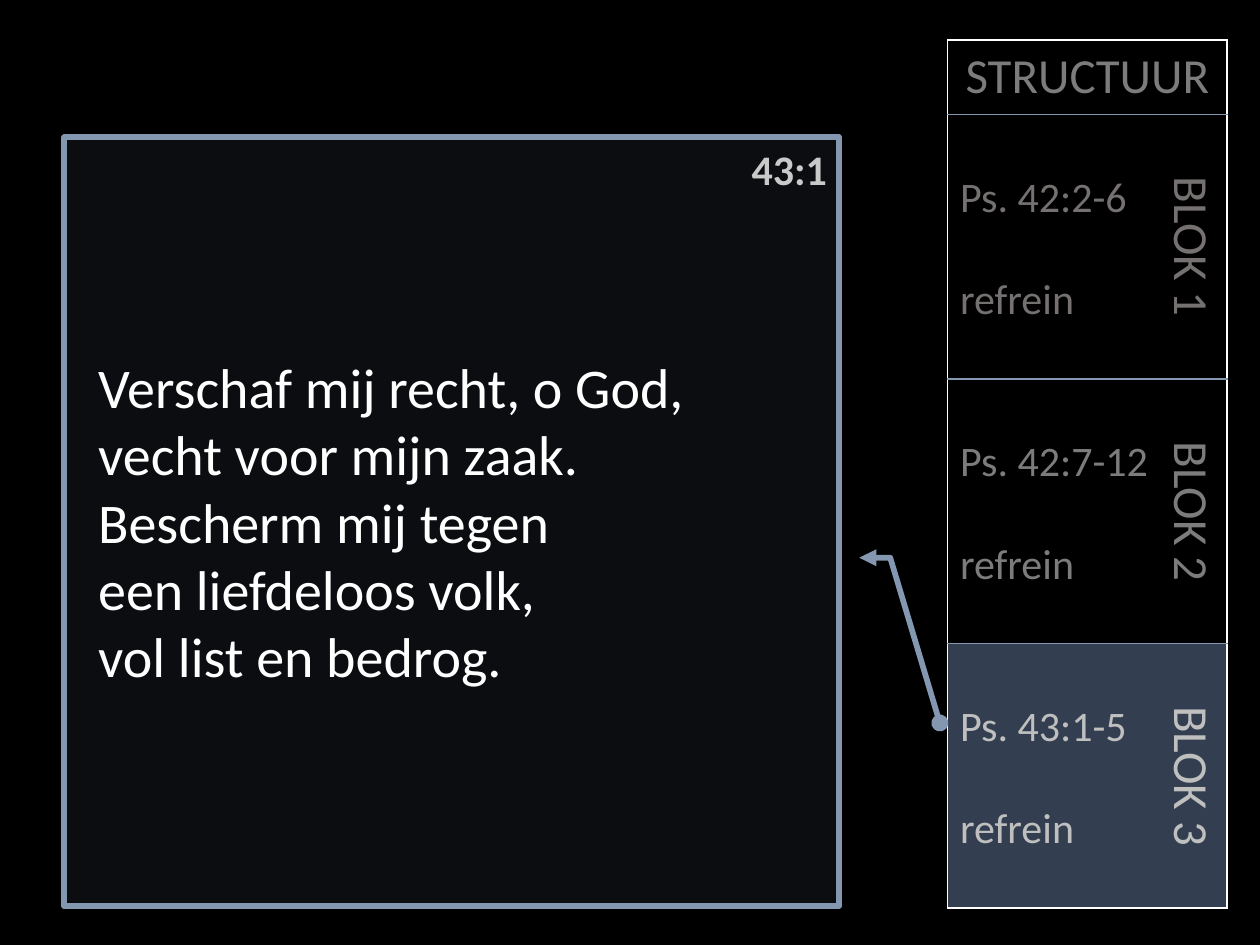
from dataclasses import dataclass

from lxml.etree import SubElement
from pptx import Presentation
from pptx.dml.color import RGBColor as Rgb
from pptx.enum.shapes import MSO_SHAPE as Kind
from pptx.enum.text import MSO_ANCHOR as Anchor, PP_ALIGN as Align
from pptx.oxml import parse_xml
from pptx.oxml.ns import nsdecls, qn
from pptx.util import Pt


@dataclass(frozen=True)
class Theme:
    font: str = "Calibri"
    back: str = "000000"
    white: str = "FFFFFF"
    blue: str = "8497B0"
    panel: str = "222A35"
    active: str = "333F50"
    head: str = "7C7C7C"
    label: str = "C9C9C9"
    small: int = 24
    mid: int = 28
    big: int = 32


THEME = Theme()
LINE = 29.3  # height of one line of small text

# passage, block name, text colour, fill
BLOCKS = [
    ("Ps. 42:2-6", "BLOK 1", "767171", None),
    ("Ps. 42:7-12", "BLOK 2", "7C7C7C", None),
    ("Ps. 43:1-5", "BLOK 3", "BFBFBF", THEME.active),
]
VERSE = [
    "Verschaf mij recht, o God,",
    "vecht voor mijn zaak.",
    "Bescherm mij tegen",
    "een liefdeloos volk,",
    "vol list en bedrog.",
]


def write(frame, lines, size, color, align=Align.LEFT, bold=False, gap=0):
    """Write one paragraph per line, with a gap before all but the first."""
    for i, line in enumerate(lines):
        para = frame.add_paragraph() if i else frame.paragraphs[0]
        para.alignment = align
        if i and gap:
            para.space_before = Pt(gap)
        run = para.add_run()
        run.text = line
        run.font.name = THEME.font
        run.font.size = Pt(size)
        run.font.bold = bold
        run.font.color.rgb = Rgb.from_string(color)


def add_text(slide, box, lines, size, color, **look):
    frame = slide.shapes.add_textbox(*map(Pt, box)).text_frame
    frame.word_wrap = True
    write(frame, lines, size, color, **look)


def style_cell(cell, fill, left, right, top, bottom):
    """Set the fill and the four borders; None means no fill or no line."""
    if fill:
        cell.fill.solid()
        cell.fill.fore_color.rgb = Rgb.from_string(fill)
    else:
        cell.fill.background()
    props = cell._tc.get_or_add_tcPr()
    sides = {"lnL": left, "lnR": right, "lnT": top, "lnB": bottom}
    for i, (tag, color) in enumerate(sides.items()):
        paint = (f'<a:solidFill><a:srgbClr val="{color}"/></a:solidFill>'
                 if color else "<a:noFill/>")
        props.insert(i, parse_xml(
            f'<a:{tag} {nsdecls("a")} w="{Pt(1)}">{paint}</a:{tag}>'))


def add_table(slide):
    count = len(BLOCKS)
    table = slide.shapes.add_table(
        count + 1, 2, Pt(541.4), Pt(23), Pt(159.8), Pt(496.1)).table
    table.first_row = table.horz_banding = False
    for col, width in zip(table.columns, (127.4, 32.4)):
        col.width = Pt(width)
    for i, row in enumerate(table.rows):
        row.height = Pt(151.2 if i else 42.5)

    white, blue = THEME.white, THEME.blue
    head = table.cell(0, 0)
    head.merge(table.cell(0, 1))
    write(head.text_frame, ["STRUCTUUR"], THEME.mid, THEME.head, Align.CENTER)
    style_cell(head, None, white, white, white, blue)
    style_cell(table.cell(0, 1), None, None, white, white, blue)

    for i, (psalm, name, color, fill) in enumerate(BLOCKS, 1):
        base = white if i == count else blue
        cell = table.cell(i, 0)
        cell.margin_top = Pt(3.6 + LINE)
        write(cell.text_frame, [psalm, "refrein"], THEME.small, color, gap=LINE)
        style_cell(cell, fill, white, None, blue, base)

        side = table.cell(i, 1)
        side.vertical_anchor = Anchor.MIDDLE
        write(side.text_frame, [name], THEME.mid, color, Align.CENTER)
        style_cell(side, fill, None, white, blue, base)
        side._tc.get_or_add_tcPr().set("vert", "vert")


def add_callout(slide):
    shape = slide.shapes.add_shape(
        Kind.LINE_CALLOUT_2, Pt(36.7), Pt(78.5), Pt(442.8), Pt(439.2))
    shape.shadow.inherit = False
    for i, value in enumerate((0.547, 1.026, 0.547, 1.066, 0.762, 1.13)):
        shape.adjustments[i] = value
    shape.fill.solid()
    shape.fill.fore_color.rgb = Rgb.from_string(THEME.panel)
    tint = shape._element.spPr.find(qn("a:solidFill"))[0]
    SubElement(tint, qn("a:alpha"), val="33000")
    shape.line.color.rgb = Rgb.from_string(THEME.blue)
    shape.line.width = Pt(3.25)
    line = shape.line._get_or_add_ln()
    SubElement(line, qn("a:headEnd"), type="triangle")
    SubElement(line, qn("a:tailEnd"), type="oval")


def main():
    deck = Presentation()
    deck.slide_width, deck.slide_height = Pt(720), Pt(540)
    slide = deck.slides.add_slide(deck.slide_layouts[6])
    back = slide.background.fill
    back.solid()
    back.fore_color.rgb = Rgb.from_string(THEME.back)

    add_table(slide)
    add_callout(slide)
    add_text(slide, (394.6, 78.5, 85, 36.3), ["43:1"], THEME.small,
             THEME.label, align=Align.RIGHT, bold=True)
    add_text(slide, (49, 198, 418.3, 201), VERSE, THEME.big, THEME.white)
    deck.save("out.pptx")


if __name__ == "__main__":
    main()
